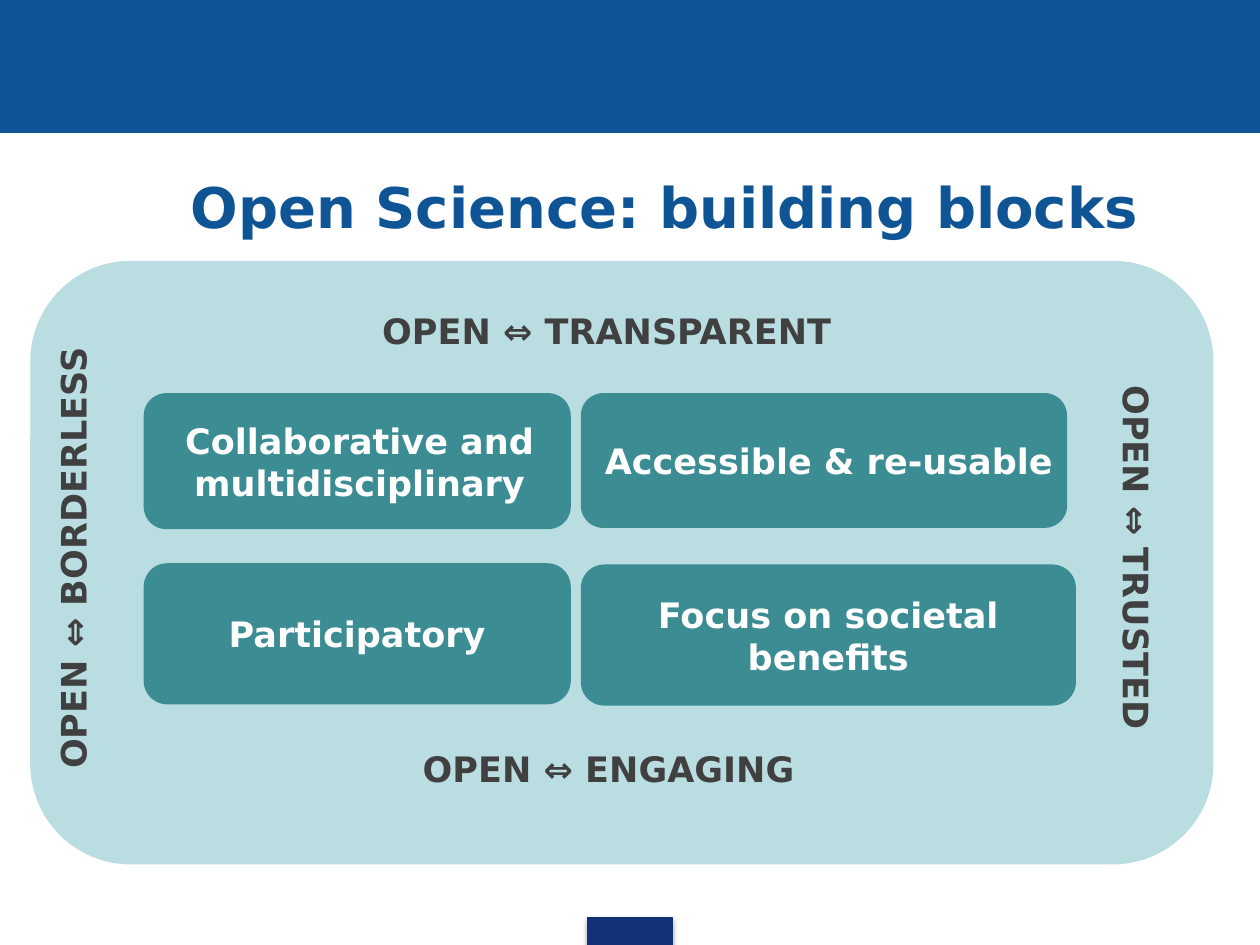
from dataclasses import dataclass

from lxml.etree import SubElement
from pptx import Presentation
from pptx.dml.color import RGBColor
from pptx.enum.shapes import MSO_SHAPE as Shape
from pptx.enum.text import MSO_ANCHOR as Anchor, MSO_AUTO_SIZE as AutoSize, PP_ALIGN as Align
from pptx.oxml.ns import qn
from pptx.util import Inches, Pt


@dataclass(frozen=True)
class Theme:
    font: str = "DejaVu Sans"
    blue: str = "0F5494"
    navy: str = "133176"
    panel: str = "BADDE1"
    block: str = "3C8C93"
    white: str = "FFFFFF"
    label: str = "404040"
    title_size: int = 32
    text_size: int = 20


@dataclass(frozen=True)
class Box:
    left: float
    top: float
    width: float
    height: float

    def inner(self, left, top, width, height):
        """A box whose left and top count from this one's corner."""
        return Box(self.left + left, self.top + top, width, height)

    def emu(self):
        return [Inches(v) for v in (self.left, self.top, self.width, self.height)]


THEME = Theme()
PAGE = Box(0, 0, 10, 7.5)


def add_filled(slide, kind, box, color, outlined=False):
    shape = slide.shapes.add_shape(kind, *box.emu())
    shape.shadow.inherit = False
    shape.fill.solid()
    shape.fill.fore_color.rgb = RGBColor.from_string(color)
    if outlined:
        shape.line.color.rgb = RGBColor.from_string(color)
        shape.line.width = Pt(0.75)
    else:
        shape.line.fill.background()
    return shape


def write(frame, text, size, color, align=Align.CENTER):
    paragraph = frame.paragraphs[0]
    paragraph.alignment = align
    run = paragraph.add_run()
    run.text = text
    run.font.name = THEME.font
    run.font.size = Pt(size)
    run.font.bold = True
    run.font.color.rgb = RGBColor.from_string(color)
    return paragraph


def add_soft_shadow(shape):
    effects = shape.element.spPr.find(qn("a:effectLst"))
    shadow = SubElement(effects, qn("a:outerShdw"), blurRad=str(Pt(3.1)),
                        dist=str(Pt(1.8)), dir="5400000", rotWithShape="0")
    black = SubElement(shadow, qn("a:srgbClr"), val="000000")
    SubElement(black, qn("a:alpha"), val="35000")


def add_frame(slide, page):
    """Banner across the top and small tab at the foot."""
    add_filled(slide, Shape.RECTANGLE, page.inner(0, 0, page.width, 1.05), THEME.blue, True)
    tab = page.inner((page.width - 0.67) / 2, page.height - 0.22, 0.67, 0.22)
    add_soft_shadow(add_filled(slide, Shape.RECTANGLE, tab, THEME.navy, True))


def add_title(slide, box):
    title = slide.shapes.title
    title.left, title.top, title.width, title.height = box.emu()
    frame = title.text_frame
    frame.word_wrap = True
    frame.auto_size = AutoSize.NONE
    frame.vertical_anchor = Anchor.BOTTOM
    frame.margin_bottom = Inches(0.02)
    paragraph = write(frame, "Open Science: building blocks", THEME.title_size, THEME.blue)
    properties = paragraph._p.get_or_add_pPr()
    properties.set("marL", str(Inches(0.39)))
    properties.set("indent", "0")


def add_block(slide, box, text, right_margin):
    block = add_filled(slide, Shape.ROUNDED_RECTANGLE, box, THEME.block)
    frame = block.text_frame
    frame.word_wrap = True
    frame.vertical_anchor = Anchor.MIDDLE
    frame.margin_left = Inches(0.08)
    frame.margin_right = Inches(right_margin)
    write(frame, text, THEME.text_size, THEME.white)


def add_label(slide, box, text, direction="horz", align=Align.CENTER, wrap=False):
    label = slide.shapes.add_textbox(*box.emu())
    frame = label.text_frame
    frame.word_wrap = wrap
    frame.auto_size = AutoSize.SHAPE_TO_FIT_TEXT
    label.element.txBody.bodyPr.set("vert", direction)
    write(frame, text, THEME.text_size, THEME.label, align)


def add_panel(slide, box):
    """Rounded panel: four blocks in two columns, one label along each side."""
    add_filled(slide, Shape.ROUNDED_RECTANGLE, box, THEME.panel)

    # Blocks: text, column, top, width, height, right margin
    columns = (0.9, 4.37)
    blocks = (
        ("Collaborative and multidisciplinary", 0, 1.05, 3.39, 1.08, 0.04),
        ("Accessible & re-usable", 1, 1.05, 3.86, 1.07, 0),
        ("Participatory", 0, 2.4, 3.39, 1.12, 0.08),
        ("Focus on societal benefits", 1, 2.41, 3.93, 1.12, 0.08),
    )
    for text, column, top, width, height, margin in blocks:
        add_block(slide, box.inner(columns[column], top, width, height), text, margin)

    # Side labels
    add_label(slide, box.inner(8.46, 0.74, 0.54, 3.23), "OPEN ⇔ TRUSTED", "vert", wrap=True)
    add_label(slide, box.inner(0.12, 0.58, 0.54, 3.55), "OPEN ⇔ BORDERLESS",
              "vert270", Align.LEFT)

    # Top and bottom labels
    add_label(slide, box.inner(2.63, 0.34, 3.89, 0.44), "OPEN ⇔ TRANSPARENT")
    add_label(slide, box.inner(2.95, 3.81, 3.28, 0.44), "OPEN ⇔ ENGAGING")


def main():
    deck = Presentation()
    deck.slide_width, deck.slide_height = Inches(PAGE.width), Inches(PAGE.height)
    slide = deck.slides.add_slide(deck.slide_layouts[5])  # Title Only
    add_frame(slide, PAGE)
    add_title(slide, PAGE.inner(0.04, 0.84, 10.08, 1.08))
    add_panel(slide, PAGE.inner(0.24, 2.07, 9.39, 4.79))
    deck.save("out.pptx")


if __name__ == "__main__":
    main()
